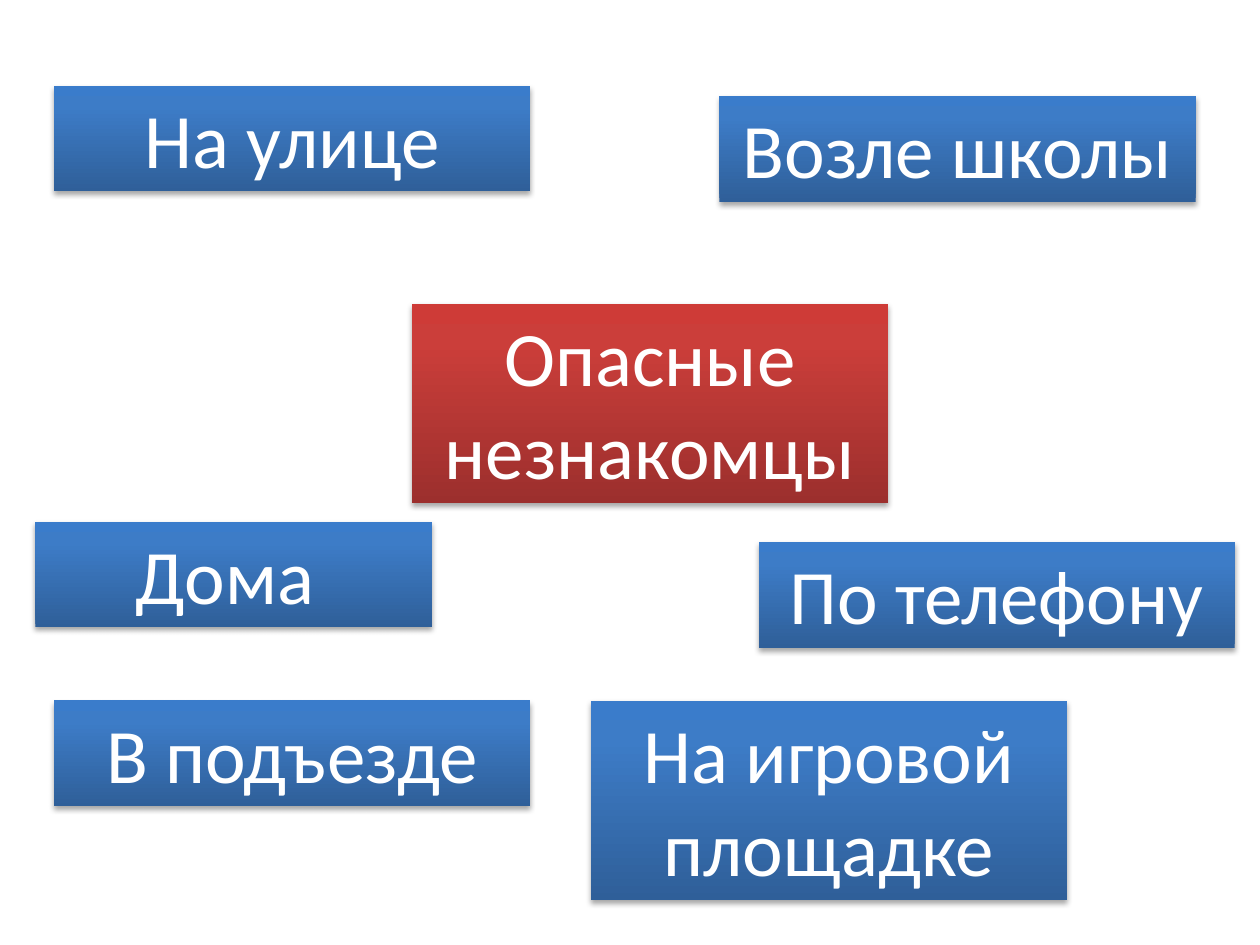
import pptx
import pptx.dml.color
import pptx.enum.shapes
import pptx.enum.text
import pptx.oxml
import pptx.oxml.ns
import pptx.util
from pptx.util import Inches

COLORS = {"text": "FFFFFF", "shadow": "000000"}
# Gradient stops from the bottom edge to the top: percent, colour
GRADIENTS = {
    "red": [(0, "9C2F2D"), (80, "CB3E3A"), (100, "CE3B37")],
    "blue": [(0, "2F5F99"), (80, "3D7CC7"), (100, "3A7CCB")],
}
ONE_LINE, TWO_LINES = 0.84, 1.58
WIDE, NARROW = 3.78, 3.15

# text, left, top, width, height, gradient
BOXES = [
    ("Опасные незнакомцы", 3.27, 2.41, WIDE, TWO_LINES, "red"),
    ("На улице", 0.43, 0.68, WIDE, ONE_LINE, "blue"),
    ("Возле школы", 5.71, 0.76, WIDE, ONE_LINE, "blue"),
    ("На игровой площадке", 4.69, 5.56, WIDE, TWO_LINES, "blue"),
    ("Дома ", 0.28, 4.14, NARROW, ONE_LINE, "blue"),
    ("В подъезде", 0.43, 5.56, WIDE, ONE_LINE, "blue"),
    ("По телефону", 6.02, 4.3, WIDE, ONE_LINE, "blue"),
]


def parse_drawing(tag, attributes, content):
    return pptx.oxml.parse_xml(
        f'<a:{tag} {pptx.oxml.ns.nsdecls("a")} {attributes}>{content}</a:{tag}>')


def fill_gradient(box, stops):
    box.fill.gradient()
    box.fill.gradient_angle = 90
    stop_list = box._element.spPr.find(".//" + pptx.oxml.ns.qn("a:gsLst"))
    for old_stop in list(stop_list):
        stop_list.remove(old_stop)
    for percent, color in stops:
        stop_list.append(parse_drawing(
            "gs", f'pos="{percent * 1000}"', f'<a:srgbClr val="{color}"/>'))


def add_shadow(box):
    box.shadow.inherit = False
    effects = box._element.spPr.find(pptx.oxml.ns.qn("a:effectLst"))
    effects.append(parse_drawing(
        "outerShdw",
        f'blurRad="{pptx.util.Pt(3.1)}" dist="{pptx.util.Pt(1.8)}" '
        'dir="5400000" rotWithShape="0"',
        f'<a:srgbClr val="{COLORS["shadow"]}"><a:alpha val="35000"/></a:srgbClr>'))


def write_text(box, text, size=44, font="Calibri", color=COLORS["text"]):
    frame = box.text_frame
    frame.word_wrap = True
    frame.auto_size = pptx.enum.text.MSO_AUTO_SIZE.SHAPE_TO_FIT_TEXT
    frame.vertical_anchor = pptx.enum.text.MSO_ANCHOR.TOP
    para = frame.paragraphs[0]
    para.alignment = pptx.enum.text.PP_ALIGN.CENTER
    span = para.add_run()
    span.text = text
    span.font.size = pptx.util.Pt(size)
    span.font.name = font
    span.font.color.rgb = pptx.dml.color.RGBColor.from_string(color)


def main():
    deck = pptx.Presentation()
    deck.slide_width, deck.slide_height = Inches(10), Inches(7.5)
    page = deck.slides.add_slide(deck.slide_layouts[6])
    for text, left, top, width, height, gradient in BOXES:
        box = page.shapes.add_shape(
            pptx.enum.shapes.MSO_SHAPE.RECTANGLE,
            Inches(left), Inches(top), Inches(width), Inches(height))
        fill_gradient(box, GRADIENTS[gradient])
        box.line.fill.background()
        add_shadow(box)
        write_text(box, text)
    deck.save("out.pptx")


if __name__ == "__main__":
    main()
